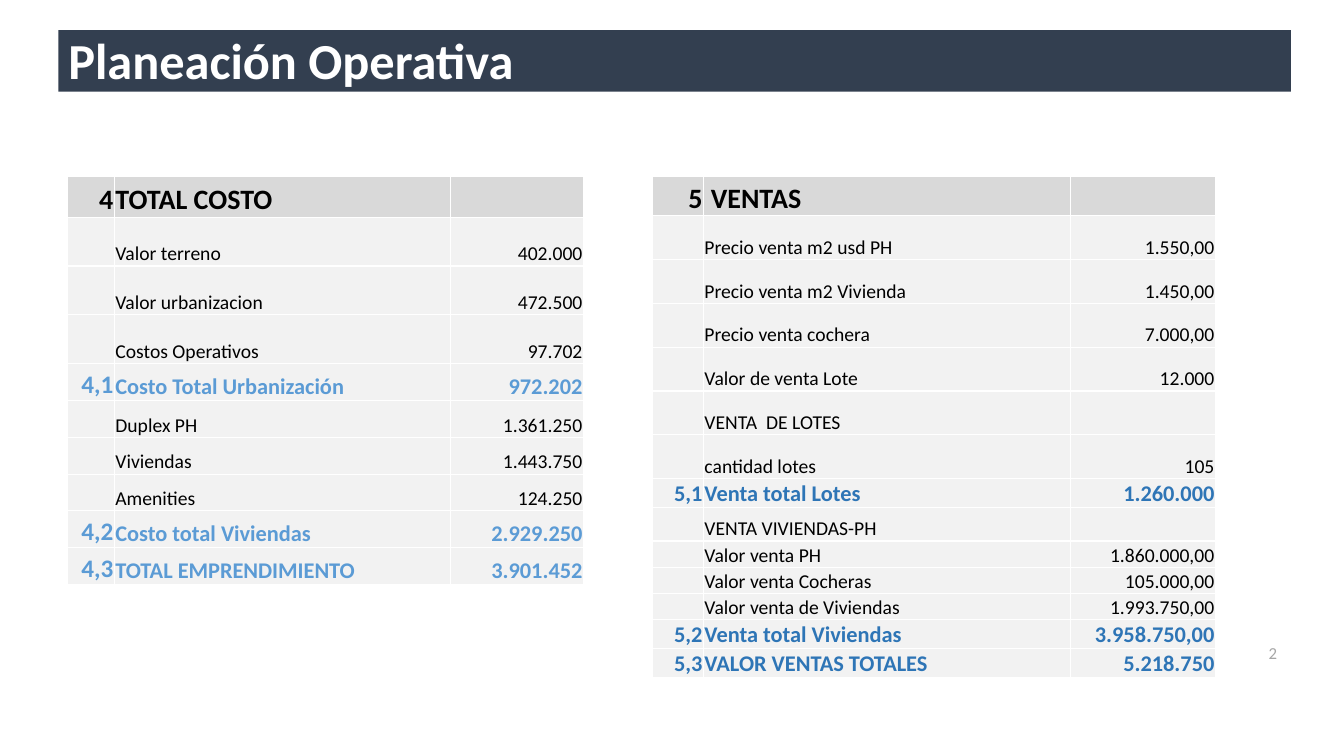
from lxml.etree import SubElement
from pptx import Presentation
from pptx.dml.color import RGBColor
from pptx.enum.shapes import MSO_SHAPE
from pptx.enum.text import MSO_ANCHOR, PP_ALIGN
from pptx.oxml.ns import qn
from pptx.util import Emu, Pt

PX = 4572
FONT = "Calibri"
WHITE = RGBColor(0xFF, 0xFF, 0xFF)
BLACK = RGBColor(0x00, 0x00, 0x00)
NAVY = RGBColor(0x33, 0x3F, 0x50)
HEADER_GRAY = RGBColor(0xD9, 0xD9, 0xD9)
ROW_GRAY = RGBColor(0xF2, 0xF2, 0xF2)
NUMBER_GRAY = RGBColor(0xA6, 0xA6, 0xA6)
LIGHT_BLUE = RGBColor(0x5B, 0x9B, 0xD5)
DARK_BLUE = RGBColor(0x2E, 0x75, 0xB6)

COSTS = [
    (81, "4", "TOTAL COSTO", ""),
    (97, "", "Valor terreno", "402.000"),
    (97, "", "Valor urbanizacion", "472.500"),
    (97, "", "Costos Operativos", "97.702"),
    (73, "4,1", "Costo Total Urbanización", "972.202"),
    (73, "", "Duplex PH", "1.361.250"),
    (73, "", "Viviendas", "1.443.750"),
    (73, "", "Amenities", "124.250"),
    (73, "4,2", "Costo total Viviendas", "2.929.250"),
    (73, "4,3", "TOTAL EMPRENDIMIENTO", "3.901.452"),
]
SALES = [
    (78, "5", " VENTAS", ""),
    (87, "", "Precio venta m2 usd PH", "1.550,00"),
    (87, "", "Precio venta m2 Vivienda", "1.450,00"),
    (87, "", "Precio venta cochera", "7.000,00"),
    (87, "", "Valor de venta Lote", "12.000"),
    (87, "", "VENTA  DE LOTES", ""),
    (87, "", "cantidad lotes", "105"),
    (58, "5,1", "Venta total Lotes", "1.260.000"),
    (66, "", "VENTA VIVIENDAS-PH", ""),
    (52, "", "Valor venta PH", "1.860.000,00"),
    (52, "", "Valor venta Cocheras", "105.000,00"),
    (52, "", "Valor venta de Viviendas", "1.993.750,00"),
    (58, "5,2", "Venta total Viviendas", "3.958.750,00"),
    (58, "5,3", "VALOR VENTAS TOTALES", "5.218.750"),
]


def px(length):
    return Emu(length * PX)


def write(para, text, size, color, bold=False, align=PP_ALIGN.LEFT):
    para.text = text
    para.alignment = align
    for span in para.runs:
        span.font.name = FONT
        span.font.size = Pt(size)
        span.font.bold = bold
        span.font.color.rgb = color


def add_text(slide, box, text, size, color, **style):
    frame = slide.shapes.add_textbox(*map(px, box)).text_frame
    frame.word_wrap = True
    frame.vertical_anchor = MSO_ANCHOR.MIDDLE
    write(frame.paragraphs[0], text, size, color, **style)
    return frame.paragraphs[0]


def add_title(slide, box):
    left, top, width, height = box
    band = slide.shapes.add_shape(MSO_SHAPE.RECTANGLE, *map(px, box))
    band.shadow.inherit = False
    band.fill.solid()
    band.fill.fore_color.rgb = NAVY
    band.line.fill.background()
    title_box = (left, top - 12, 1818, height + 32)
    title = add_text(slide, title_box, "Planeación Operativa", 36, WHITE, bold=True)
    title.line_spacing = 0.9


def style_cell(cell, fill):
    properties = cell._tc.get_or_add_tcPr()
    for side in ("lnL", "lnR", "lnT", "lnB"):
        line = SubElement(properties, qn(f"a:{side}"), w=str(Pt(1)))
        solid = SubElement(line, qn("a:solidFill"))
        SubElement(solid, qn("a:srgbClr"), val=str(WHITE))
    cell.fill.solid()
    cell.fill.fore_color.rgb = fill
    cell.margin_left = cell.margin_right = cell.margin_top = px(2)
    cell.margin_bottom = 0
    cell.vertical_anchor = MSO_ANCHOR.BOTTOM


def add_budget(slide, left, top, widths, entries, accent, code_size):
    height = sum(entry[0] for entry in entries)
    box = (left, top, sum(widths), height)
    frame = slide.shapes.add_table(len(entries), len(widths), *map(px, box))
    table = frame.table
    table.first_row = table.horz_banding = False
    for column, width in zip(table.columns, widths):
        column.width = px(width)
    for index, (row_height, *texts) in enumerate(entries):
        table.rows[index].height = px(row_height)
        is_header = index == 0
        is_total = bool(texts[0]) and not is_header
        size = 20 if is_header else 16 if is_total else 14
        color = accent if is_total else BLACK
        for position, text in enumerate(texts):
            cell = table.cell(index, position)
            style_cell(cell, HEADER_GRAY if is_header else ROW_GRAY)
            para = cell.text_frame.paragraphs[0]
            if text:
                text_size = code_size if is_total and position == 0 else size
                align = PP_ALIGN.LEFT if position == 1 else PP_ALIGN.RIGHT
                write(para, text, text_size, color, is_header or is_total, align)
            else:
                SubElement(para._p, qn("a:endParaRPr"), sz="1400")


def add_page_number(slide, box):
    add_text(slide, box, "2", 12, NUMBER_GRAY, align=PP_ALIGN.RIGHT)


def main():
    deck = Presentation()
    deck.slide_width, deck.slide_height = px(2667), px(1500)
    slide = deck.slides.add_slide(deck.slide_layouts[6])
    add_title(slide, (116, 60, 2446, 122))
    add_budget(slide, 134, 350, (93, 667, 264), COSTS, LIGHT_BLUE, 18)
    add_budget(slide, 1294, 350, (102, 728, 288), SALES, DARK_BLUE, 16)
    add_page_number(slide, (2454, 1238, 100, 114))
    deck.save("out.pptx")


if __name__ == "__main__":
    main()
